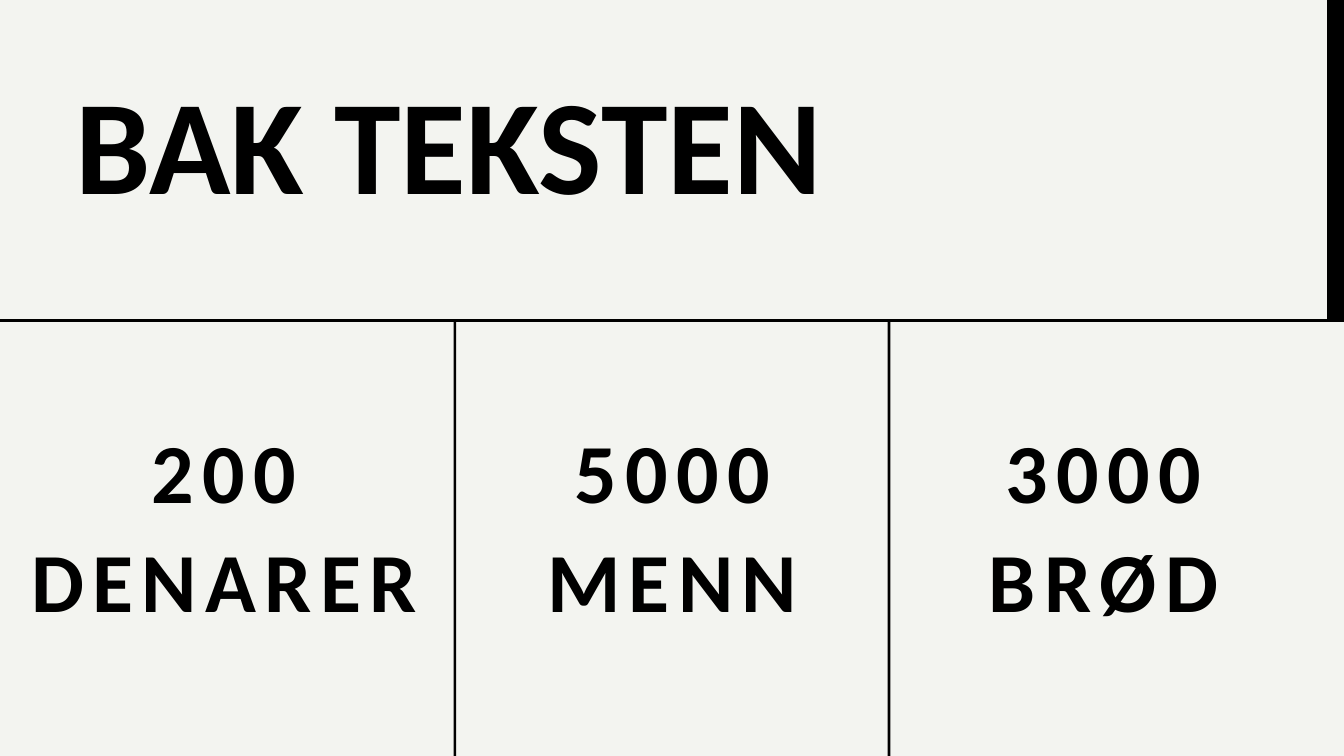
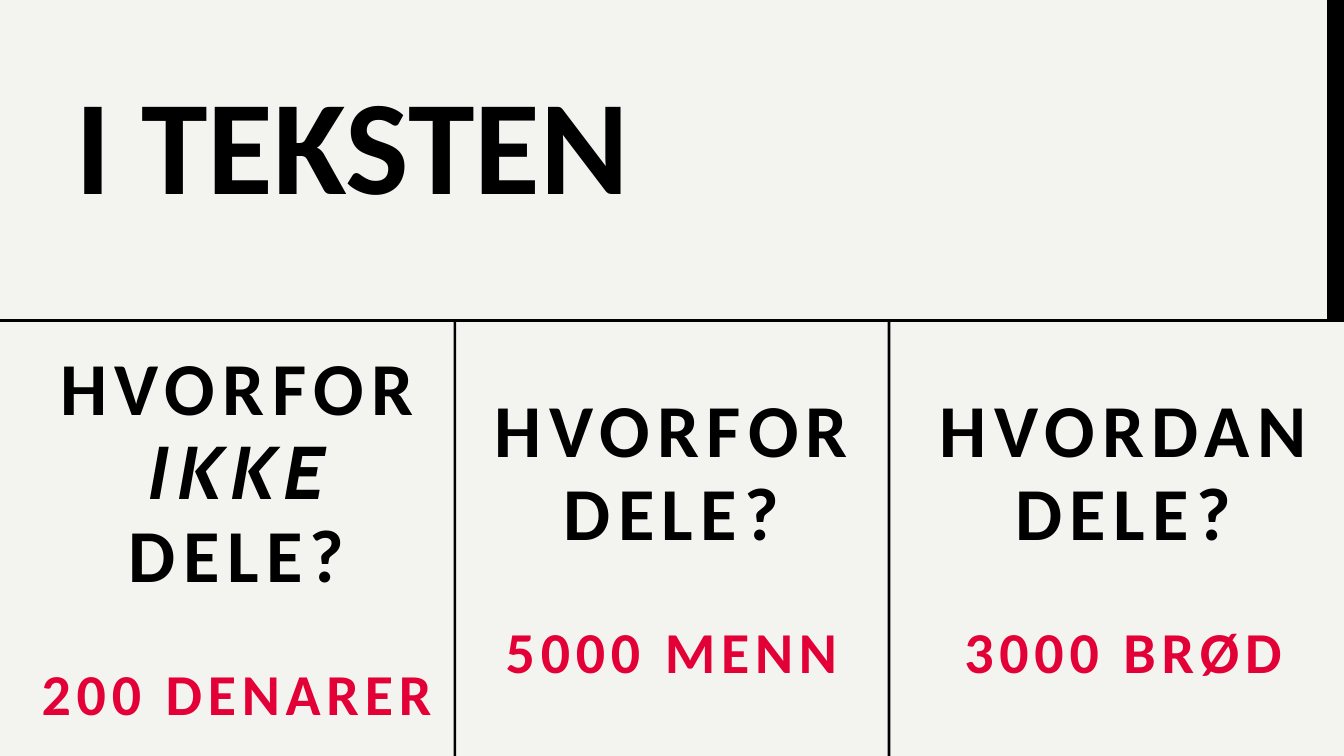
from pptx import Presentation
from pptx.dml.color import RGBColor
from pptx.enum.shapes import MSO_SHAPE as SHAPE
from pptx.enum.text import MSO_AUTO_SIZE as AUTO, PP_ALIGN as ALIGN
from pptx.util import Inches, Pt

COLORS = {"paper": "F3F4F0", "ink": "000000", "accent": "E30037"}
FONT, ITALIC_FONT = "Calibri", "Cabin"
W, H = 20, 11.25
HEADER_H = 4.75
DIVIDERS = (6.75, 13.21)
RULE = 0.04
EDGE_W = 0.25
TITLE_BOX = (1.12, 1.71, 18.34, 2.09)
BOX_PAD = 0.16

# Text styles: size, line height, letter spacing (points), colour
TITLE = (144, 113.8, 0, "ink")
FACT = (90, 117, 9, "ink")
QUESTION = (80, 89.6, 8, "ink")
ANSWER = (62, 69.4, 6.2, "accent")


def rgb(name):
    return RGBColor.from_string(COLORS[name])


def add_bar(slide, x, y, w, h):
    sp = slide.shapes.add_shape(SHAPE.RECTANGLE, *map(Inches, (x, y, w, h)))
    sp.shadow.inherit = False
    sp.fill.solid()
    sp.fill.fore_color.rgb = rgb("ink")
    sp.line.fill.background()


def add_textbox(slide, x, y, w, h):
    tf = slide.shapes.add_textbox(*map(Inches, (x, y, w, h))).text_frame
    tf.margin_left = tf.margin_top = tf.margin_right = tf.margin_bottom = 0
    tf.word_wrap = True
    tf.auto_size = AUTO.SHAPE_TO_FIT_TEXT
    return tf


def write_line(p, text, style, align, italic=False):
    size, leading, spacing, color = style
    p.alignment = align
    p.line_spacing = Pt(leading)
    r = p.add_run()
    r.text = text
    r.font.size = Pt(size)
    r.font.name = ITALIC_FONT if italic else FONT
    r.font.bold = True
    r.font.italic = italic
    r.font.color.rgb = rgb(color)
    if spacing:
        r._r.get_or_add_rPr().set("spc", str(round(spacing * 100)))


def add_column(slide, x, w, middle, lines, style, answer=None):
    """Centre a stack of lines on the height `middle`, with an optional answer one line below."""
    points = len(lines) * style[1] + (2 * ANSWER[1] if answer else 0)
    h = round(points / 72 + BOX_PAD, 2)
    tf = add_textbox(slide, x, middle - h / 2, w, h)
    for i, text in enumerate(lines):
        p = tf.add_paragraph() if i else tf.paragraphs[0]
        write_line(p, text, style, ALIGN.CENTER, italic=text == "IKKE")
    if answer:
        p = tf.add_paragraph()
        p.space_before = Pt(ANSWER[1])
        write_line(p, answer, ANSWER, ALIGN.CENTER)


def add_framed_slide(prs, title):
    slide = prs.slides.add_slide(prs.slide_layouts[6])
    slide.background.fill.solid()
    slide.background.fill.fore_color.rgb = rgb("paper")
    tf = add_textbox(slide, *TITLE_BOX)
    write_line(tf.paragraphs[0], title, TITLE, ALIGN.JUSTIFY)
    add_bar(slide, 0, HEADER_H, W, RULE)
    add_bar(slide, W - EDGE_W, 0, EDGE_W, HEADER_H)
    for x in DIVIDERS:
        add_bar(slide, x, HEADER_H, RULE, H - HEADER_H)
    return slide


def main():
    prs = Presentation()
    prs.slide_width, prs.slide_height = Inches(W), Inches(H)

    slide = add_framed_slide(prs, "BAK TEKSTEN")
    for x, w, lines in (
        (0.38, 5.91, ("200", "DENARER")),
        (7.87, 4.27, ("5000", "MENN")),
        (14.29, 4.27, ("3000", "BRØD")),
    ):
        add_column(slide, x, w, 7.82, lines, FACT)

    slide = add_framed_slide(prs, "I TEKSTEN")
    for x, lines, answer in (
        (0.57, ("HVORFOR", "IKKE", "DELE?"), "200 DENARER"),
        (7.04, ("HVORFOR", "DELE?"), "5000 MENN"),
        (13.76, ("HVORDAN", "DELE?"), "3000 BRØD"),
    ):
        add_column(slide, x, 5.91, 8.07, lines, QUESTION, answer)

    prs.save("out.pptx")


if __name__ == "__main__":
    main()
